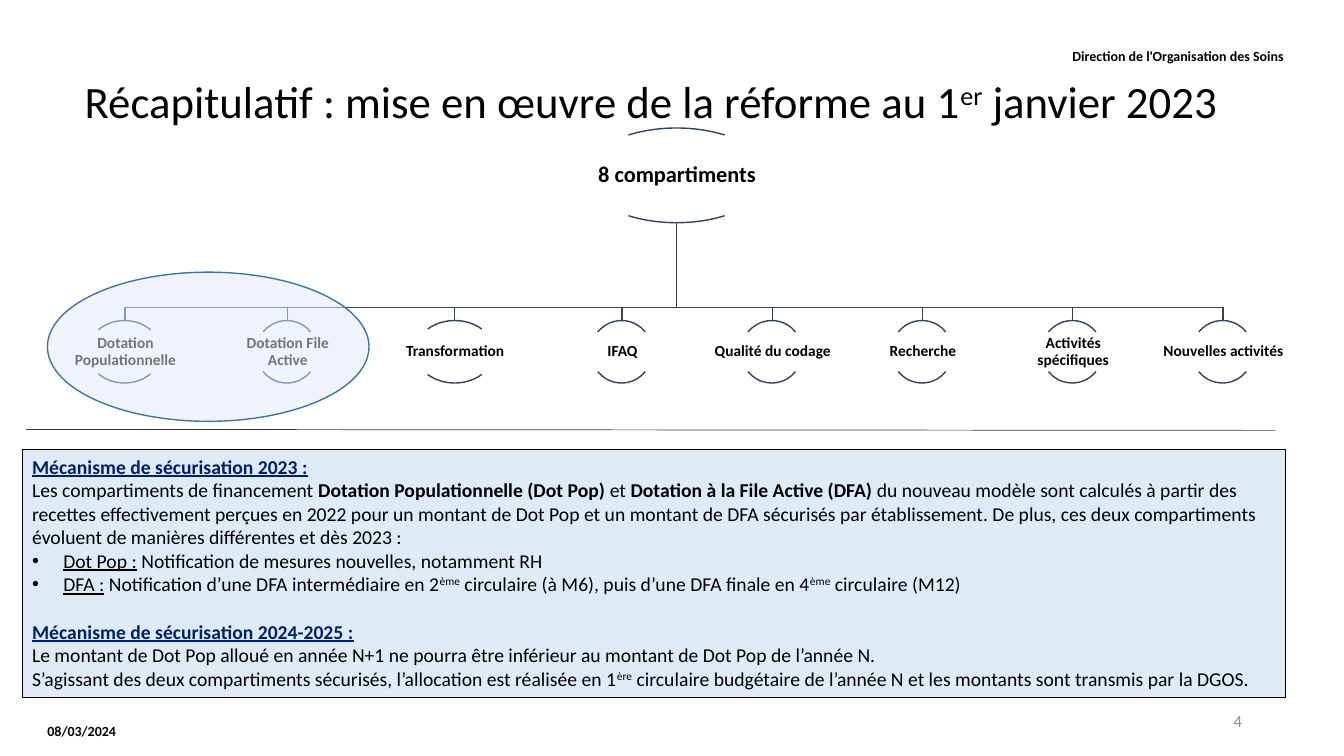
import pptx
import pptx.util
import pptx.dml.color
import pptx.enum.shapes
import pptx.enum.text
import pptx.oxml.ns
import lxml.etree

PX = 9144
COLORS = {
    "black": "000000",
    "navy": "002060",
    "branch": "364355",
    "rule": "333F50",
    "pale": "DEEBF7",
    "ellipse": "43739E",
    "number": "8C8C8C",
}
SHAPES = pptx.enum.shapes.MSO_SHAPE
ALIGN = pptx.enum.text.PP_ALIGN
MIDDLE = pptx.enum.text.MSO_ANCHOR.MIDDLE
qn = pptx.oxml.ns.qn


def write(paragraph, runs, size):
    for text, look in runs:
        run = paragraph.add_run()
        run.text = text
        formats = {"name": "Calibri", "size": pptx.util.Pt(size), "bold": False, "underline": False}
        formats.update((key, look[key]) for key in ("bold", "underline") if key in look)
        for key, value in formats.items():
            setattr(run.font, key, value)
        run.font.color.rgb = pptx.dml.color.RGBColor.from_string(COLORS[look.get("color", "black")])
        if look.get("raised"):
            run._r.get_or_add_rPr().set("baseline", "30000")


def style(shape, line, weight, fill=None):
    shape.shadow.inherit = False
    shape.line.color.rgb = pptx.dml.color.RGBColor.from_string(COLORS[line])
    shape.line.width = pptx.util.Pt(weight)
    if fill:
        shape.fill.solid()
        shape.fill.fore_color.rgb = pptx.dml.color.RGBColor.from_string(COLORS[fill])
    else:
        shape.fill.background()


deck = pptx.Presentation()
deck.slide_width, deck.slide_height = 1333 * PX, 750 * PX
slide = deck.slides.add_slide(deck.slide_layouts[5])
shapes = slide.shapes

BOLD = {"bold": True}
UNDERLINED = {"underline": True}
RAISED = {"raised": True}
HEADING = {"bold": True, "underline": True, "color": "navy"}

title = shapes.title
title.left, title.top, title.width, title.height = 74 * PX, 64 * PX, 1228 * PX, 79 * PX
title.text_frame.vertical_anchor = MIDDLE
title_line = title.text_frame.paragraphs[0]
title_line.alignment = ALIGN.LEFT
title_line.line_spacing = 0.9
write(title_line, [
    ("Récapitulatif : mise en œuvre de la réforme au 1", {}),
    ("er", RAISED),
    (" janvier 2023", {}),
], 32)

ROOT_CENTER, ROOT_TOP, ROOT_WIDTH, ROOT_HEIGHT = 671, 127, 365, 94
CHILD_TOP, CHILD_HEIGHT, CHILD_GAP, BUS_Y = 318, 62, 26, 305
children = [
    ("Dotation Populationnelle", 147),
    ("Dotation File Active", 123),
    ("Transformation", 157),
    ("IFAQ", 123),
    ("Qualité du codage", 123),
    ("Recherche", 123),
    ("Activités spécifiques", 123),
    ("Nouvelles activités", 123),
]

nodes = [("8 compartiments", ROOT_CENTER - ROOT_WIDTH // 2, ROOT_TOP, ROOT_WIDTH, ROOT_HEIGHT, 16)]
child_left = 51
for name, width in children:
    nodes.append((name, child_left, CHILD_TOP, width, CHILD_HEIGHT, 11))
    center = child_left + width // 2
    root_bottom = ROOT_TOP + ROOT_HEIGHT
    branch = shapes.build_freeform(ROOT_CENTER, root_bottom, scale=PX)
    branch.add_line_segments(
        [(ROOT_CENTER, BUS_Y), (center, BUS_Y), (center, CHILD_TOP)], close=False)
    style(branch.convert_to_shape(), "branch", 1)
    child_left += width + CHILD_GAP

labels = [
    ("08/03/2024", 47, 700, 171, 50, 10, ALIGN.LEFT, "black"),
    ("Direction de l'Organisation des Soins", 418, 29, 855, 52, 10, ALIGN.RIGHT, "black"),
    ("4", 942, 695, 290, 40, 12, ALIGN.RIGHT, "number"),
]
for name, left, top, width, height, size in nodes:
    for start, end in ((132, 192), (24, 84)):
        arc = shapes.add_shape(
            SHAPES.ARC, (left + width // 4) * PX, top * PX, width // 2 * PX, height * PX)
        arc.adjustments[0], arc.adjustments[1] = start, end
        style(arc, "branch", 1)
    labels.append((name, left, top + round(height * 0.18), width, round(height * 0.64),
                   size, ALIGN.CENTER, "black"))

for text, left, top, width, height, size, alignment, color in labels:
    label = shapes.add_textbox(left * PX, top * PX, width * PX, height * PX).text_frame
    frame_formats = {"word_wrap": True, "vertical_anchor": MIDDLE, "margin_left": 0,
                     "margin_right": 0, "margin_top": 0, "margin_bottom": 0}
    for key, value in frame_formats.items():
        setattr(label, key, value)
    label_line = label.paragraphs[0]
    label_line.alignment = alignment
    if alignment == ALIGN.CENTER:
        label_line.line_spacing = 0.9
    write(label_line, [(text, {"bold": color == "black", "color": color})], size)

separator = shapes.add_connector(
    pptx.enum.shapes.MSO_CONNECTOR.STRAIGHT, 1265 * PX, 427 * PX, 26 * PX, 426 * PX)
separator.line.color.rgb = pptx.dml.color.RGBColor.from_string(COLORS["rule"])
separator.line.width = pptx.util.Pt(0.5)
lxml.etree.SubElement(separator._element.spPr, qn("a:effectLst"))

mechanism = shapes.add_shape(SHAPES.RECTANGLE, 22 * PX, 446 * PX, 1253 * PX, 246 * PX)
style(mechanism, "black", 0.75, "pale")
mechanism.text_frame.word_wrap = True
mechanism.text_frame.vertical_anchor = pptx.enum.text.MSO_ANCHOR.TOP
mechanism_paragraphs = [
    ("heading", [("Mécanisme de sécurisation 2023 :", HEADING)]),
    ("body", [
        ("Les compartiments de financement ", {}),
        ("Dotation Populationnelle (Dot Pop) ", BOLD),
        ("et ", {}),
        ("Dotation à la File Active (DFA) ", BOLD),
        ("du nouveau modèle sont calculés à partir des recettes effectivement perçues en 2022 "
         "pour un montant de Dot Pop et un montant de DFA sécurisés par établissement. De plus, "
         "ces deux compartiments évoluent de manières différentes et dès 2023 :", {}),
    ]),
    ("bullet", [("Dot Pop :", UNDERLINED), (" Notification de mesures nouvelles, notamment RH", {})]),
    ("bullet", [
        ("DFA :", UNDERLINED),
        (" Notification d’une DFA intermédiaire en 2", {}),
        ("ème", RAISED),
        (" circulaire (à M6), puis d’une DFA finale en 4", {}),
        ("ème", RAISED),
        (" circulaire (M12)", {}),
    ]),
    ("spaced", [("Mécanisme de sécurisation 2024-2025 :", HEADING)]),
    ("body", [("Le montant de Dot Pop alloué en année N+1 ne pourra être inférieur au montant "
               "de Dot Pop de l’année N.", {})]),
    ("body", [
        ("S’agissant des deux compartiments sécurisés, l’allocation est réalisée en 1", {}),
        ("ère", RAISED),
        (" circulaire budgétaire de l’année N et les montants sont transmis par la DGOS.", {}),
    ]),
]
for index, (role, runs) in enumerate(mechanism_paragraphs):
    frame = mechanism.text_frame
    paragraph = frame.add_paragraph() if index else frame.paragraphs[0]
    paragraph.alignment = ALIGN.LEFT
    if role == "spaced":
        paragraph.space_before = pptx.util.Pt(17)
    if role == "bullet":
        properties = paragraph._p.get_or_add_pPr()
        properties.set("marL", str(31 * PX))
        properties.set("indent", str(-31 * PX))
        lxml.etree.SubElement(properties, qn("a:buFont"), typeface="Arial")
        lxml.etree.SubElement(properties, qn("a:buChar"), char="•")
    write(paragraph, runs, 14)

highlight = shapes.add_shape(SHAPES.OVAL, 47 * PX, 270 * PX, 319 * PX, 148 * PX)
style(highlight, "ellipse", 1, "pale")
highlight_color = highlight._element.spPr.find(qn("a:solidFill")).find(qn("a:srgbClr"))
lxml.etree.SubElement(highlight_color, qn("a:alpha"), val="50000")

deck.save("out.pptx")
